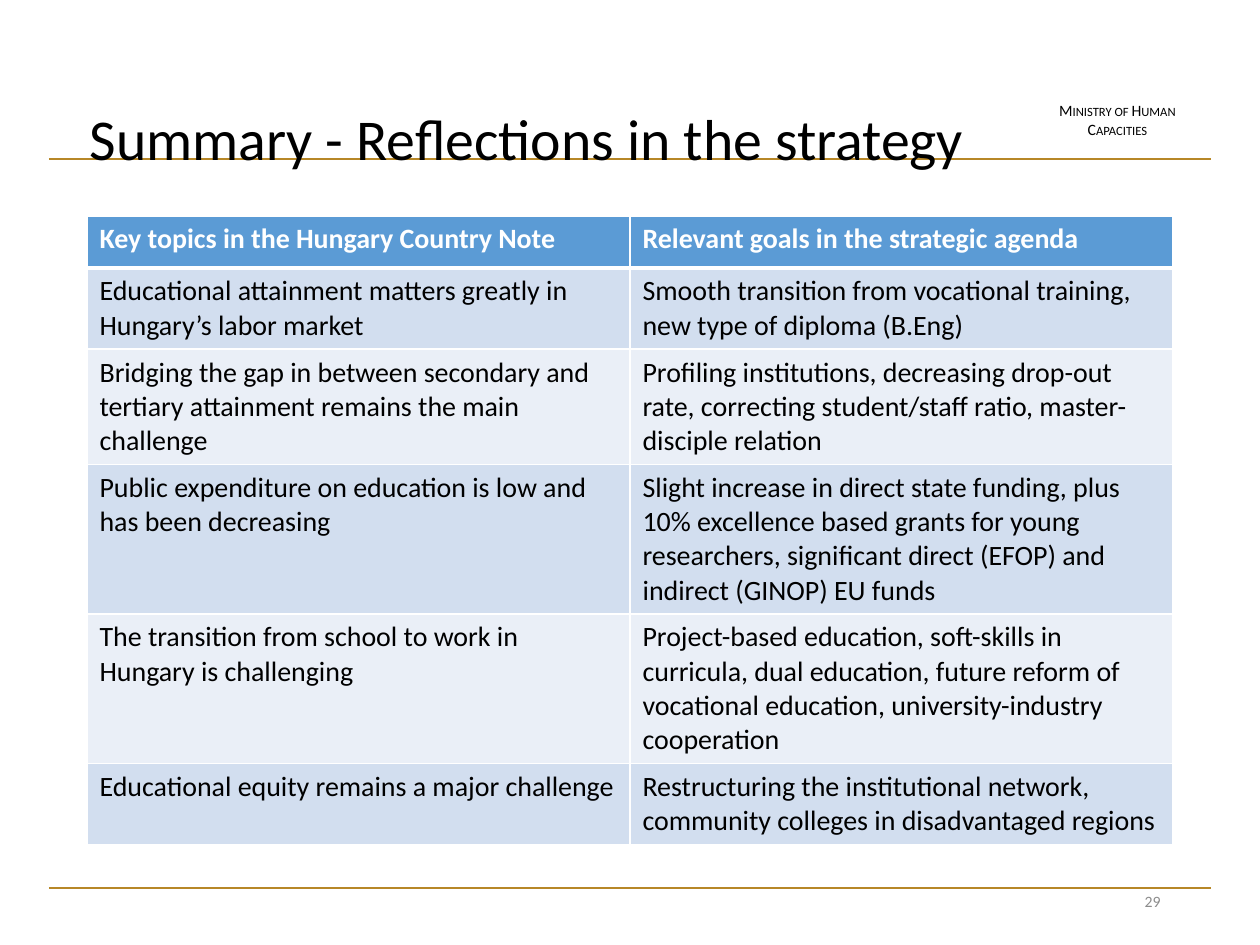
import lxml.etree
import pptx
import pptx.dml.color
import pptx.enum.shapes
import pptx.enum.text
import pptx.oxml.ns
import pptx.util

RGBColor = pptx.dml.color.RGBColor
Align = pptx.enum.text.PP_ALIGN
Anchor = pptx.enum.text.MSO_ANCHOR

GOLD = RGBColor(0xB7, 0x87, 0x27)
BLACK = RGBColor(0, 0, 0)
WHITE = RGBColor(0xFF, 0xFF, 0xFF)
GRAY = RGBColor(0x8C, 0x8C, 0x8C)
BLUE = RGBColor(0x5B, 0x9B, 0xD5)
BAND_DARK = RGBColor(0xD2, 0xDE, 0xEF)
BAND_LIGHT = RGBColor(0xEA, 0xEF, 0xF7)

FONT = "Calibri"
PX_PER_INCH = 126
ROW_HEIGHT = 52

TOPICS = [
    ("Key topics in the Hungary Country Note",
     "Relevant goals in the strategic agenda"),
    ("Educational attainment matters greatly in Hungary’s labor market",
     "Smooth transition from vocational training, new type of diploma (B.Eng)"),
    ("Bridging the gap in between secondary and tertiary attainment remains the main challenge",
     "Profiling institutions, decreasing drop-out rate, correcting student/staff ratio, "
     "master-disciple relation"),
    ("Public expenditure on education is low and has been decreasing",
     "Slight increase in direct state funding, plus 10% excellence based grants for young "
     "researchers, significant direct (EFOP) and indirect (GINOP) EU funds"),
    ("The transition from school to work in Hungary is challenging",
     "Project-based education, soft-skills in curricula, dual education, future reform of "
     "vocational education, university-industry cooperation"),
    ("Educational equity remains a major challenge",
     "Restructuring the institutional network, community colleges in disadvantaged regions"),
]


def px(length):
    return pptx.util.Emu(round(length * 914400 / PX_PER_INCH))


def write_text(frame, text, size, color=BLACK, bold=False, align=Align.LEFT,
               spacing=None, small_caps=False):
    para = frame.paragraphs[0]
    para.alignment = align
    para.line_spacing = spacing
    for index, line in enumerate(text.split("\n")):
        if index:
            para.add_line_break()
        span = para.add_run()
        span.text = line
        span.font.name = FONT
        span.font.size = pptx.util.Pt(size)
        span.font.bold = bold
        span.font.color.rgb = color
        if small_caps:
            span.font._element.set("cap", "small")


def add_rule(page, left, top, width):
    rule = page.shapes.add_connector(
        pptx.enum.shapes.MSO_CONNECTOR.STRAIGHT,
        px(left), px(top), px(left + width), px(top))
    rule.line.color.rgb = GOLD
    rule.line.width = pptx.util.Pt(1)
    lxml.etree.SubElement(rule._element.spPr, pptx.oxml.ns.qn("a:effectLst"))


def add_ministry(page, left, top, width, height):
    box = page.shapes.add_shape(
        pptx.enum.shapes.MSO_SHAPE.RECTANGLE, px(left), px(top), px(width), px(height))
    box.shadow.inherit = False
    box.fill.solid()
    box.fill.fore_color.rgb = WHITE
    box.line.fill.background()
    frame = box.text_frame
    frame.word_wrap = False
    frame.auto_size = pptx.enum.text.MSO_AUTO_SIZE.SHAPE_TO_FIT_TEXT
    frame.vertical_anchor = Anchor.TOP
    frame.margin_top = 0
    write_text(frame, "Ministry of Human\nCapacities", 9, align=Align.CENTER, small_caps=True)


def place_title(page, left, top, width, height):
    title = page.shapes.title
    title.left, title.top, title.width, title.height = map(px, (left, top, width, height))
    title.element.getparent().append(title.element)
    frame = title.text_frame
    frame.word_wrap = True
    frame.auto_size = pptx.enum.text.MSO_AUTO_SIZE.NONE
    frame.vertical_anchor = Anchor.MIDDLE
    write_text(frame, "Summary - Reflections in the strategy", 33, spacing=0.9)


def set_borders(cell, bottom_width):
    properties = cell._tc.get_or_add_tcPr()
    widths = {"lnL": 1, "lnR": 1, "lnT": 1, "lnB": bottom_width}
    for position, (side, width) in enumerate(widths.items()):
        border = lxml.etree.Element(
            pptx.oxml.ns.qn("a:" + side), w=str(pptx.util.Pt(width)))
        fill = lxml.etree.SubElement(border, pptx.oxml.ns.qn("a:solidFill"))
        lxml.etree.SubElement(fill, pptx.oxml.ns.qn("a:srgbClr"), val=str(WHITE))
        properties.insert(position, border)


def add_topics(page, left, top, width, height):
    holder = page.shapes.add_table(
        len(TOPICS), len(TOPICS[0]), px(left), px(top), px(width), px(height))
    table = holder.table
    for row_index, texts in enumerate(TOPICS):
        header = row_index == 0
        band = BLUE if header else BAND_DARK if row_index % 2 else BAND_LIGHT
        table.rows[row_index].height = px(ROW_HEIGHT)
        for column_index, text in enumerate(texts):
            cell = table.cell(row_index, column_index)
            cell.fill.solid()
            cell.fill.fore_color.rgb = band
            set_borders(cell, 3 if header or row_index == 0 else 1)
            write_text(cell.text_frame, text, 16, WHITE if header else BLACK, header)
    holder.height = px(height)


def add_page_number(page, left, top, width, height):
    box = page.shapes.add_textbox(px(left), px(top), px(width), px(height))
    box.text_frame.word_wrap = True
    box.text_frame.vertical_anchor = Anchor.MIDDLE
    write_text(box.text_frame, "29", 9, GRAY, align=Align.RIGHT)


def main():
    deck = pptx.Presentation()
    deck.slide_width, deck.slide_height = px(1260), px(945)
    page = deck.slides.add_slide(deck.slide_layouts[5])
    for top in (159, 888):
        add_rule(page, 49, top, 1162)
    add_ministry(page, 1023, 101, 189, 44)
    place_title(page, 77, 50, 1086, 183)
    add_topics(page, 87, 216, 1086, 619)
    add_page_number(page, 890, 876, 283, 50)
    deck.save("out.pptx")


if __name__ == "__main__":
    main()
